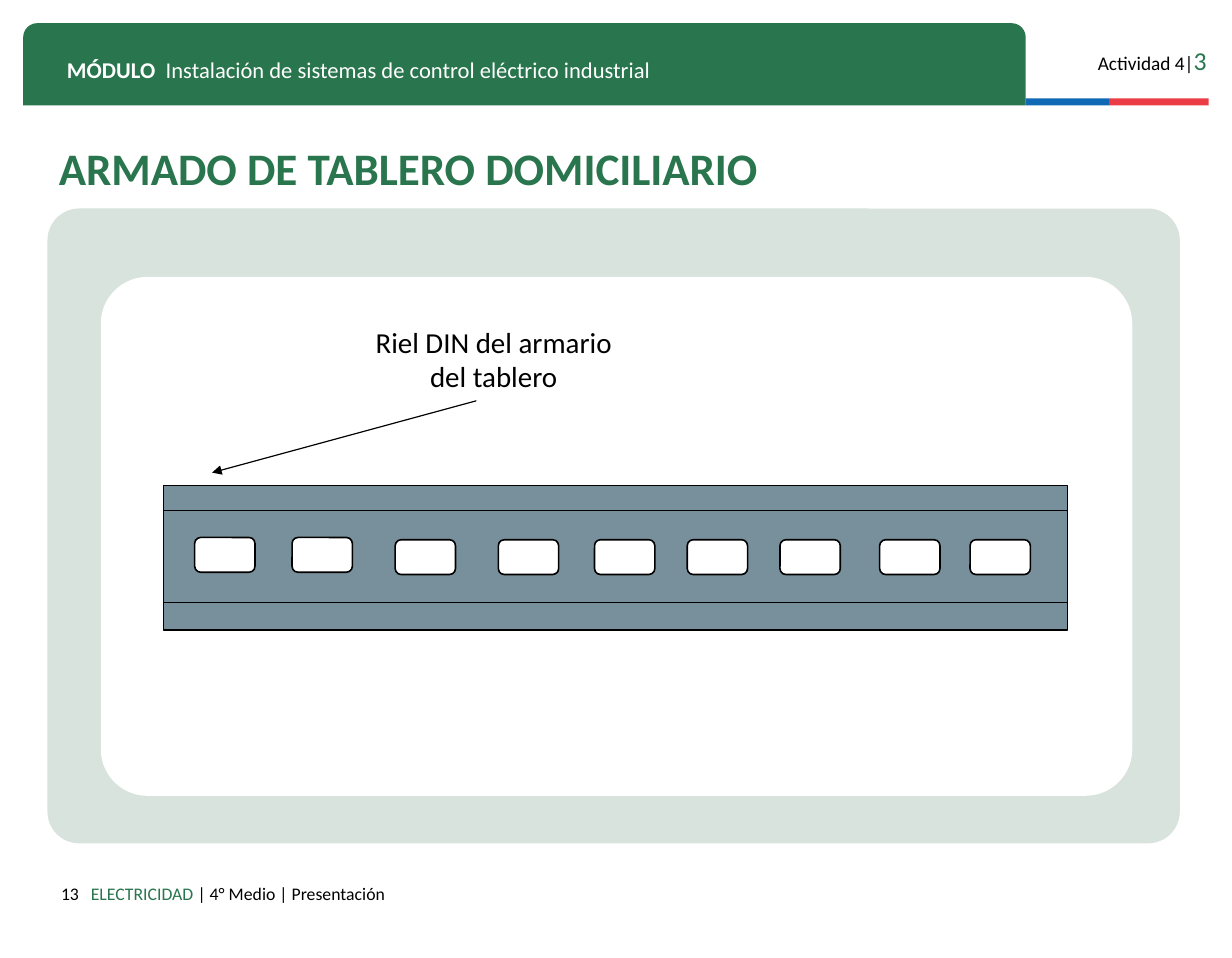
import collections

import lxml.etree
import pptx
import pptx.dml.color
import pptx.enum.shapes
import pptx.enum.text
import pptx.oxml.ns
import pptx.util

COLOURS = {
    "green": "29754D", "pale": "D7E3DC", "blue": "0F69B4", "red": "EB3C46",
    "steel": "78909C", "white": "FFFFFF", "black": "000000",
}
FONT = "Calibri"
COLUMNS, ROWS = 106.3, 82.7
CELL = pptx.util.Inches(0.1)
SHAPES = pptx.enum.shapes.MSO_SHAPE
ALIGN = pptx.enum.text.PP_ALIGN
ANCHOR = pptx.enum.text.MSO_ANCHOR

Box = collections.namedtuple("Box", "left top width height")
Span = collections.namedtuple("Span", "text size colour bold", defaults=[False])


def within(box, left, top, width, height):
    """Place a box by its column and row offsets inside another."""
    return Box(box.left + left, box.top + top, width, height)


def emu(*cells):
    """Turn grid cells into slide units."""
    return [round(cell * CELL) for cell in cells]


def rgb(name):
    return pptx.dml.color.RGBColor.from_string(COLOURS[name])


def add_panel(shapes, kind, box, fill, outline=None, corners=()):
    panel = shapes.add_shape(kind, *emu(*box))
    panel.shadow.inherit = False
    panel.fill.solid()
    panel.fill.fore_color.rgb = rgb(fill)
    if outline:
        panel.line.color.rgb = rgb(outline)
        panel.line.width = pptx.util.Pt(1)
    else:
        panel.line.fill.background()
    for index, corner in enumerate(corners):
        panel.adjustments[index] = corner


def add_line(shapes, start, end, arrow=False):
    line = shapes.add_connector(
        pptx.enum.shapes.MSO_CONNECTOR.STRAIGHT, *emu(*start, *end))
    line.line.color.rgb = rgb("black")
    line.line.width = pptx.util.Pt(0.75)
    properties = line._element.spPr
    if arrow:
        outline = properties.find(pptx.oxml.ns.qn("a:ln"))
        lxml.etree.SubElement(outline, pptx.oxml.ns.qn("a:tailEnd"), type="triangle")
    lxml.etree.SubElement(properties, pptx.oxml.ns.qn("a:effectLst"))


def add_text(shapes, box, spans, align=ALIGN.LEFT, anchor=ANCHOR.TOP,
             side_inset=1, top_inset=1, spacing=None):
    frame = shapes.add_textbox(*emu(*box)).text_frame
    frame.word_wrap = True
    frame.vertical_anchor = anchor
    frame.margin_left, frame.margin_right = emu(side_inset, side_inset)
    frame.margin_top, frame.margin_bottom = emu(top_inset, top_inset)
    para = frame.paragraphs[0]
    para.alignment = align
    if spacing:
        para.line_spacing = spacing
    for span in spans:
        run = para.add_run()
        run.text = span.text
        run.font.name = FONT
        run.font.size = pptx.util.Pt(span.size)
        run.font.bold = span.bold
        run.font.color.rgb = rgb(span.colour)


def add_header(shapes, box):
    banner_width, stripe_height = 86.5, 0.6
    add_panel(shapes, SHAPES.ROUND_2_SAME_RECTANGLE,
              within(box, 0, 0, banner_width, box.height), "green",
              corners=(0.17, 0))
    stripe_left = banner_width
    for width, colour in ((7.2, "blue"), (8.6, "red")):
        stripe = within(box, stripe_left, box.height - stripe_height,
                        width, stripe_height)
        add_panel(shapes, SHAPES.RECTANGLE, stripe, colour)
        stripe_left += width
    add_text(shapes, within(box, 90.3, 0.9, 12.8, 3.8),
             [Span("Actividad 4|", 12, "black"), Span("3", 16, "green")],
             ALIGN.RIGHT)
    add_text(shapes, within(box, 2.8, 1.8, 81.4, 3.5), [
        Span("MÓDULO", 14, "white", True),
        Span("  Instalación de sistemas de control eléctrico industrial",
             14, "white"),
    ])


def add_title(shapes, box):
    add_text(shapes, box,
             [Span("ARMADO DE TABLERO DOMICILIARIO", 28, "green", True)],
             anchor=ANCHOR.MIDDLE, spacing=0.8)


def add_rail(shapes, box):
    """Draw the DIN rail with its row of slots and its two folds."""
    rail = shapes.add_group_shape().shapes
    add_panel(rail, SHAPES.RECTANGLE, box, "steel", "black")
    raised_slots = (2.7, 11.1)
    level_slots = (20, 28.9, 37.2, 45.2, 53.2, 61.8, 69.6)
    for top, lefts in ((4.5, raised_slots), (4.7, level_slots)):
        for left in lefts:
            add_panel(rail, SHAPES.ROUNDED_RECTANGLE,
                      within(box, left, top, 5.2, 3), "white", "black", (0.17,))
    for fold in (2.2, 10.1):
        row = box.top + fold
        add_line(rail, (box.left, row), (box.left + box.width, row))


def add_rail_label(shapes, box, target):
    """Write the label and point an arrow from its foot to the target."""
    add_line(shapes, (box.left + 13.3, box.top + box.height), target, arrow=True)
    add_text(shapes, box, [Span("Riel DIN del armario del tablero", 18, "black")],
             ALIGN.CENTER, side_inset=4, top_inset=0.5)


def add_diagram(shapes, box):
    add_panel(shapes, SHAPES.ROUNDED_RECTANGLE, box, "pale", corners=(0.05,))
    add_panel(shapes, SHAPES.ROUNDED_RECTANGLE, within(box, 4.6, 5.9, 89, 44.8),
              "white", corners=(0.09,))
    rail = within(box, 10, 23.9, 78, 12.5)
    add_rail(shapes, rail)
    add_rail_label(shapes, within(box, 23.7, 9.5, 29.6, 7.1),
                   target=(rail.left + 4.2, rail.top - 1.1))


def add_footer(shapes, box):
    number_width, subject_left = 5.8, 4.85
    add_text(shapes, within(box, 0, 0, number_width, box.height),
             [Span("13", 11, "black")], ALIGN.RIGHT)
    subject = within(box, subject_left, 0, box.width - subject_left, box.height)
    add_text(shapes, subject, [
        Span("ELECTRICIDAD ", 11, "green"),
        Span("| 4° Medio | Presentación", 11, "black"),
    ])


def main():
    deck = pptx.Presentation()
    deck.slide_width, deck.slide_height = emu(COLUMNS, ROWS)
    page = deck.slides.add_slide(deck.slide_layouts[6])
    add_header(page.shapes, Box(2, 2, 102.3, 7.1))
    add_title(page.shapes, Box(4.1, 12.9, 87.2, 3.9))
    add_diagram(page.shapes, Box(4.1, 18, 97.7, 54.8))
    add_footer(page.shapes, Box(2, 75.3, 76.3, 2.9))
    deck.save("out.pptx")


if __name__ == "__main__":
    main()
